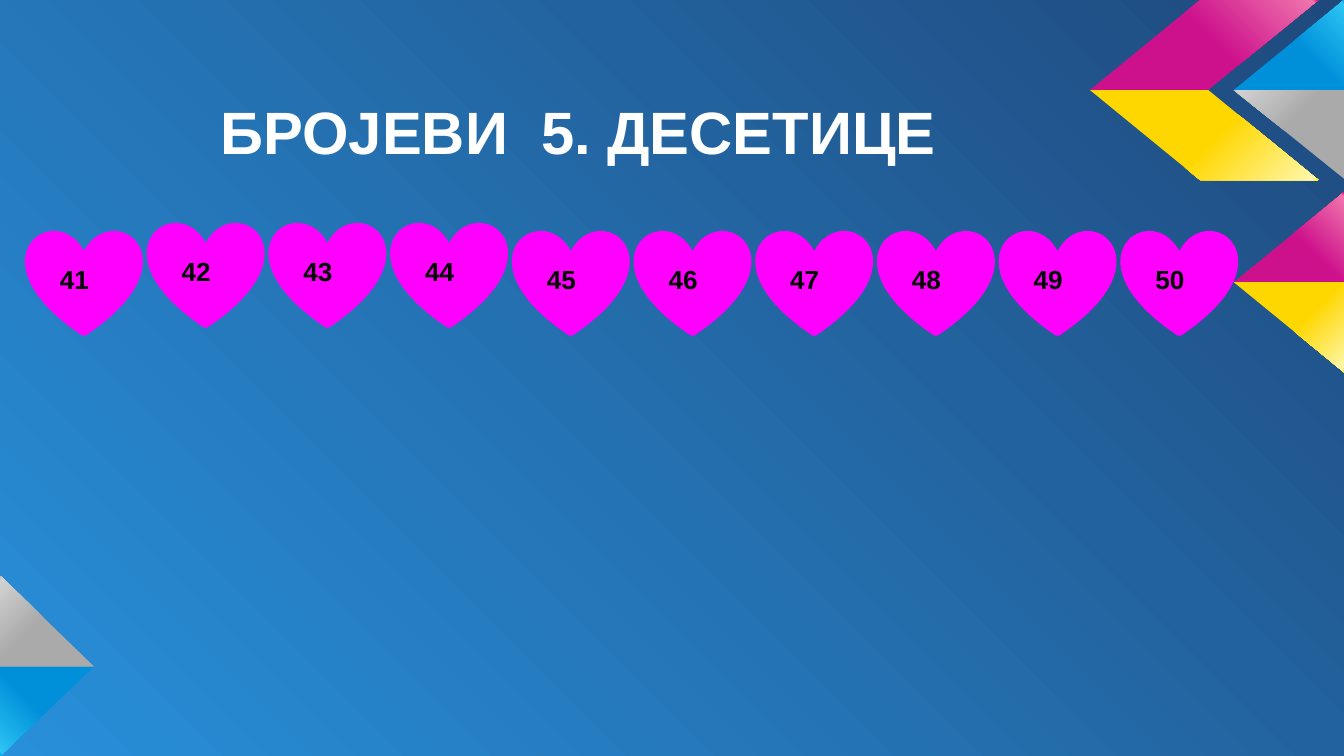
from pptx import Presentation
from pptx.dml.color import RGBColor
from pptx.enum.shapes import MSO_SHAPE
from pptx.enum.text import MSO_ANCHOR, MSO_AUTO_SIZE, PP_ALIGN
from pptx.oxml import parse_xml
from pptx.oxml.ns import nsdecls, qn
from pptx.util import Inches, Pt

HEART = MSO_SHAPE.HEART
MIDDLE = MSO_ANCHOR.MIDDLE
LEFT = PP_ALIGN.LEFT
NO_AUTOFIT = MSO_AUTO_SIZE.NONE

THEME = {
    "font": "Arial",
    "title": {"size": Pt(32), "color": "FFFFFF"},
    "number": {"size": Pt(14), "color": "000000"},
    "heart": "FF00FF",
    "background": [(0, "2890DA"), (100, "1F497D")],
    "blue": [(0, "0090DA"), (54, "0090DA"), (98, "2BC4F3"), (100, "00AEEE")],
    "gray": [(0, "AAAAAA"), (54, "AAAAAA"), (98, "D2D2D2"), (100, "B9B9B9")],
    "pink": [(0, "CD118C"), (54, "CD118C"), (98, "F074AC"), (100, "EB008B")],
    "yellow": [(0, "FFD700"), (54, "FFD700"), (98, "FFF7A9"), (100, "FFF100")],
}


def set_gradient(fill, element, stops, direction):
    """Fill with color stops along the given direction element."""
    fill.gradient()
    old = element.find(".//" + qn("a:gradFill"))
    gs = "".join(f'<a:gs pos="{pos * 1000}"><a:srgbClr val="{color}"/></a:gs>'
                 for pos, color in stops)
    old.getparent().replace(old, parse_xml(
        f'<a:gradFill {nsdecls("a")} rotWithShape="1">'
        f'<a:gsLst>{gs}</a:gsLst>{direction}</a:gradFill>'))


def write_text(shape, text, style):
    """Write one bold, left-aligned line, centred vertically."""
    tf = shape.text_frame
    frame = {"word_wrap": False, "auto_size": NO_AUTOFIT, "vertical_anchor": MIDDLE}
    for side in ("left", "right", "top", "bottom"):
        frame["margin_" + side] = Inches(0.1)
    for name, value in frame.items():
        setattr(tf, name, value)
    p = tf.paragraphs[0]
    p.alignment = LEFT
    r = p.add_run()
    r.text = text
    for name, value in {"name": THEME["font"], "size": style["size"], "bold": True}.items():
        setattr(r.font, name, value)
    r.font.color.rgb = RGBColor.from_string(style["color"])


# Widescreen 16:9 slide
prs = Presentation()
prs.slide_width = Inches(10)
prs.slide_height = Inches(10) * 9 // 16
s = prs.slides.add_slide(prs.slide_layouts[5])

# Background, radiating from the bottom-left corner
set_gradient(s.background.fill, s.element, THEME["background"],
             '<a:path path="circle"><a:fillToRect t="100000" r="100000"/></a:path>')

# Corner ribbons: color, gradient angle, outline
ribbons = [
    ("blue", 135, [(0.7, 4.96), (0, 4.96), (0, 5.62), (0.01, 5.62)]),
    ("gray", 225, [(0.7, 4.96), (0.01, 4.29), (0, 4.29), (0, 4.96)]),
    ("blue", 315, [(10, 0), (9.18, 0.67), (10, 0.67)]),
    ("gray", 225, [(9.18, 0.67), (10, 1.33), (10, 0.67)]),
    ("pink", 315, [(8.99, 0.67), (9.81, 0), (8.93, 0), (8.11, 0.67)]),
    ("pink", 315, [(10, 1.43), (9.18, 2.1), (10, 2.1)]),
    ("yellow", 45, [(9.18, 2.1), (10, 2.77), (10, 2.1)]),
    ("yellow", 45, [(8.99, 0.67), (9.81, 1.34), (8.93, 1.34), (8.11, 0.67)]),
]
for color, angle, outline in ribbons:
    points = [(Inches(x), Inches(y)) for x, y in outline]
    builder = s.shapes.build_freeform(*points[0])
    builder.add_line_segments(points[1:], close=True)
    ribbon = builder.convert_to_shape()
    ribbon.shadow.inherit = False
    ribbon.line.fill.background()
    set_gradient(ribbon.fill, ribbon.element, THEME[color],
                 f'<a:lin ang="{angle * 60000}" scaled="0"/>')

# Row of numbered hearts, 42 to 44 slightly raised
heart_color = RGBColor.from_string(THEME["heart"])
first_left, last_left = 0.21, 8.36
step = (last_left - first_left) / 9
for i, number in enumerate(range(41, 51)):
    top = 1.67 if number in (42, 43, 44) else 1.73
    heart = s.shapes.add_shape(HEART, Inches(first_left + i * step), Inches(top),
                               Inches(0.83), Inches(0.75))
    heart.shadow.inherit = False
    heart.fill.solid()
    heart.fill.fore_color.rgb = heart_color
    heart.line.color.rgb = heart_color
    heart.line.width = Pt(3)
    write_text(heart, str(number), THEME["number"])

# Title
title = s.shapes.title
title.left, title.top = Inches(1.54), Inches(0.65)
title.width, title.height = Inches(5.58), Inches(0.64)
write_text(title, "БРОЈЕВИ  5. ДЕСЕТИЦЕ", THEME["title"])

prs.save("out.pptx")
